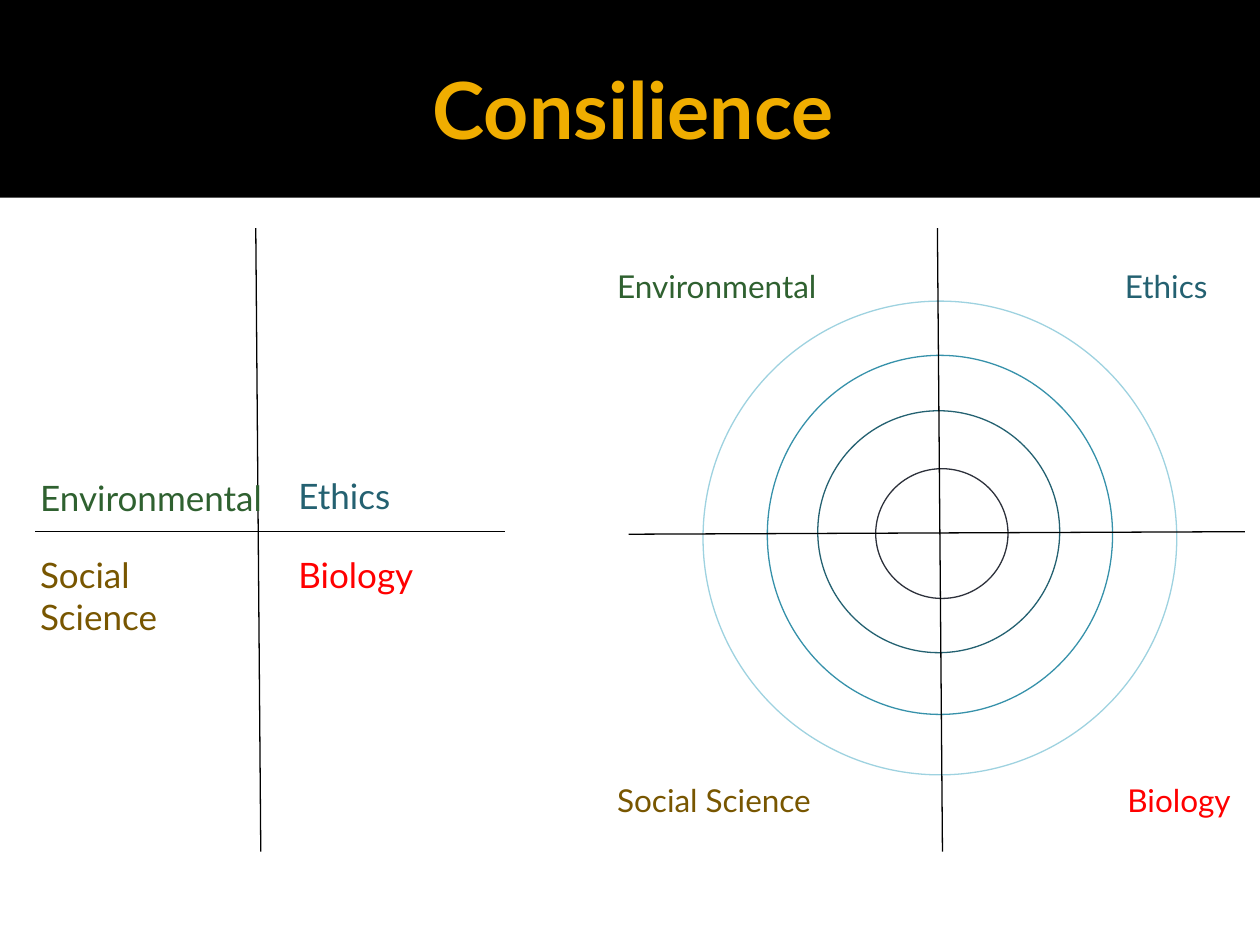
from lxml.etree import SubElement
from pptx import Presentation
from pptx.dml.color import RGBColor
from pptx.enum.shapes import MSO_CONNECTOR, MSO_SHAPE
from pptx.enum.text import MSO_ANCHOR, PP_ALIGN
from pptx.oxml.ns import qn
from pptx.util import Inches, Pt

BLACK = RGBColor(0x00, 0x00, 0x00)
GOLD = RGBColor(0xF0, 0xAD, 0x00)
GREEN = RGBColor(0x2F, 0x61, 0x30)
TEAL = RGBColor(0x24, 0x61, 0x71)
BROWN = RGBColor(0x78, 0x56, 0x00)
RED = RGBColor(0xFF, 0x00, 0x00)
MID_BLUE = RGBColor(0x36, 0x91, 0xAA)
PALE_BLUE = RGBColor(0x9E, 0xD2, 0xE0)
SLATE = RGBColor(0x2D, 0x31, 0x3B)

prs = Presentation()
prs.slide_width, prs.slide_height = Inches(10), Inches(7.5)
slide = prs.slides.add_slide(prs.slide_layouts[6])
shapes = slide.shapes


def add_text(text, box, size, color):
    frame = shapes.add_textbox(*map(Inches, box)).text_frame
    frame.word_wrap = True
    paragraph = frame.paragraphs[0]
    paragraph.text = text
    paragraph.font.name = "Lato"
    paragraph.font.size = Pt(size)
    paragraph.font.color.rgb = color
    return frame


def add_axis(*ends):
    axis = shapes.add_connector(MSO_CONNECTOR.STRAIGHT, *map(Inches, ends))
    axis.line.color.rgb = BLACK
    axis.line.width = Pt(0.75)
    SubElement(axis._element.spPr, qn("a:effectLst"))


# Title band
band = shapes.add_shape(MSO_SHAPE.RECTANGLE, 0, 0, prs.slide_width, Inches(1.57))
band.shadow.inherit = False
band.fill.solid()
band.fill.fore_color.rgb = BLACK
band.line.fill.background()

title = add_text("Consilience", (0.5, 0.17, 9, 1.37), 45, GOLD)
title.margin_right = Inches(0.05)
title.vertical_anchor = MSO_ANCHOR.MIDDLE
title.paragraphs[0].alignment = PP_ALIGN.CENTER
title.paragraphs[0].font.bold = True

# Rings around the right-hand crossing
rings = [
    ((6.49, 3.26, 1.92, 1.92), TEAL),
    ((6.09, 2.82, 2.74, 2.85), MID_BLUE),
    ((5.58, 2.39, 3.76, 3.76), PALE_BLUE),
    ((6.95, 3.72, 1.05, 1.03), SLATE),
]
for box, color in rings:
    ring = shapes.add_shape(MSO_SHAPE.OVAL, *map(Inches, box))
    ring.shadow.inherit = False
    ring.fill.background()
    ring.line.color.rgb = color
    ring.line.width = Pt(0.75)

# Axes of both diagrams
for top_x in (7.44, 2.03):
    add_axis(top_x, 1.81, top_x + 0.04, 6.76)
add_axis(4.99, 4.24, 9.88, 4.22)
add_axis(0.28, 4.22, 4.01, 4.22)

# Quadrant labels: the four fields, first at right, then at left
fields = [("Environmental", GREEN), ("Ethics", TEAL),
          ("Social Science", BROWN), ("Biology", RED)]
right_boxes = [(4.8, 2.07, 2.03, 0.4), (8.83, 2.07, 1.84, 0.4),
               (4.8, 6.15, 1.84, 0.4), (8.85, 6.15, 1.84, 0.4)]
left_boxes = [(0.22, 3.73, 2.07, 0.44), (2.27, 3.72, 1.84, 0.44),
              (0.22, 4.34, 1.84, 0.44), (2.27, 4.34, 1.84, 0.44)]
for size, boxes in ((18, right_boxes), (20, left_boxes)):
    for (field, color), box in zip(fields, boxes):
        add_text(field, box, size, color)

prs.save("out.pptx")
